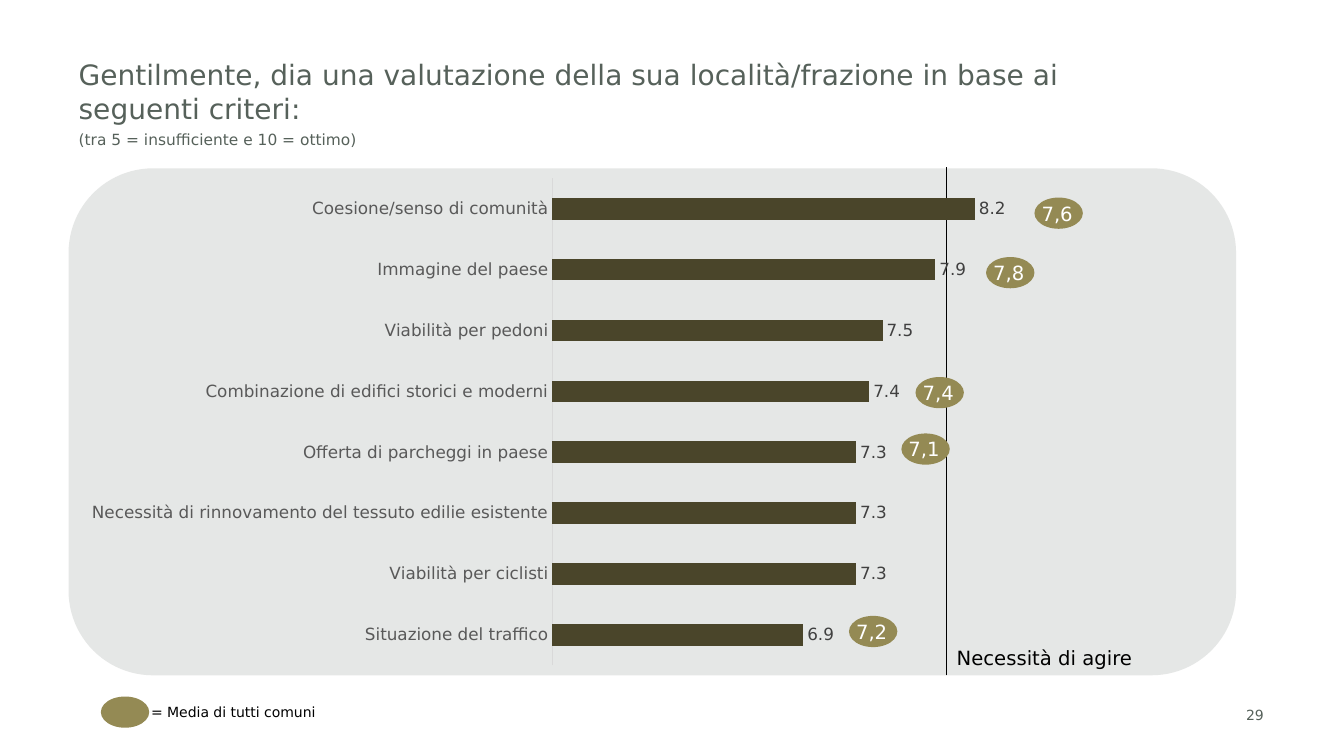
from pptx import Presentation
from pptx.chart.data import CategoryChartData
from pptx.dml.color import RGBColor
from pptx.enum.chart import XL_CHART_TYPE, XL_LABEL_POSITION, XL_TICK_MARK
from pptx.enum.shapes import MSO_CONNECTOR, MSO_SHAPE
from pptx.enum.text import MSO_ANCHOR, PP_ALIGN
from pptx.oxml.ns import qn
from pptx.util import Pt
from lxml import etree

BAR_CLUSTERED = XL_CHART_TYPE.BAR_CLUSTERED
OUTSIDE_END = XL_LABEL_POSITION.OUTSIDE_END
NO_TICK = XL_TICK_MARK.NONE
STRAIGHT = MSO_CONNECTOR.STRAIGHT
ROUNDED, OVAL = MSO_SHAPE.ROUNDED_RECTANGLE, MSO_SHAPE.OVAL
TOP, MIDDLE = MSO_ANCHOR.TOP, MSO_ANCHOR.MIDDLE
LEFT = PP_ALIGN.LEFT

# Content
QUESTION = "Gentilmente, dia una valutazione della sua località/frazione in base ai seguenti criteri:"
SCALE_NOTE = "(tra 5 = insufficiente e 10 = ottimo)"
RATINGS = [
    ("Situazione del traffico", 6.9),
    ("Viabilità per ciclisti", 7.3),
    ("Necessità di rinnovamento del tessuto edilie esistente", 7.3),
    ("Offerta di parcheggi in paese", 7.3),
    ("Combinazione di edifici storici e moderni", 7.4),
    ("Viabilità per pedoni", 7.5),
    ("Immagine del paese", 7.9),
    ("Coesione/senso di comunità", 8.2),
]
# Average of all municipalities: text, left, top
AVERAGES = [
    ("7,6", 1026, 196),
    ("7,8", 978, 255),
    ("7,4", 908, 374),
    ("7,1", 894, 430),
    ("7,2", 842, 611),
]
ACTION_LABEL = "Necessità di agire"
LEGEND = "= Media di tutti comuni"
PAGE_NUMBER = "29"

# Style and layout, 100 px to the inch
FONT = "DejaVu Sans"
COLORS = {
    "slate": "56615A", "bar": "4A452A", "average": "948A54", "axis": "D9D9D9",
    "category": "595959", "value": "404040", "black": "000000", "white": "FFFFFF",
}
EMU_PER_PX = 9144
PANEL = (68, 167, 1158, 503)
OVAL_SIZE = (48, 31)
THRESHOLD_X = 939


def px(*lengths):
    return [length * EMU_PER_PX for length in lengths]


def color(name):
    return RGBColor.from_string(COLORS[name])


def format_font(font, size, color_name):
    font.name = FONT
    font.size = Pt(size)
    font.color.rgb = color(color_name)


def write(frame, text, *, size, color_name="black", anchor=TOP, wrap=True,
          inset=None, space_before=0, append=False):
    frame.word_wrap = wrap
    frame.vertical_anchor = anchor
    if inset is not None:
        frame.margin_left = frame.margin_right = inset
        frame.margin_top = frame.margin_bottom = inset
    paragraph = frame.add_paragraph() if append else frame.paragraphs[0]
    paragraph.alignment = LEFT
    paragraph.line_spacing = 1.0
    paragraph.space_before = Pt(space_before)
    run = paragraph.add_run()
    run.text = text
    format_font(run.font, size, color_name)


def add_filled(kind, box, color_name):
    shape = slide.shapes.add_shape(kind, *px(*box))
    shape.shadow.inherit = False
    shape.fill.solid()
    shape.fill.fore_color.rgb = color(color_name)
    shape.line.fill.background()
    return shape


def add_label(text, box, **text_format):
    write(slide.shapes.add_textbox(*px(*box)).text_frame, text, **text_format)


presentation = Presentation()
presentation.slide_width, presentation.slide_height = px(1333, 750)
slide = presentation.slides.add_slide(presentation.slide_layouts[5])

# Title
title = slide.shapes.title
title.left, title.top, title.width, title.height = px(68, 52, 1110, 39)
write(title.text_frame, QUESTION, size=20, color_name="slate")
write(title.text_frame, SCALE_NOTE, size=11, color_name="slate",
      space_before=4, append=True)

# Panel with a 15 % tint
panel = add_filled(ROUNDED, PANEL, "slate")
tint = panel.fill._xPr.find(".//" + qn("a:srgbClr"))
etree.SubElement(tint, qn("a:alpha"), val="15000")

# Page number and threshold
add_label(PAGE_NUMBER, (1226, 690, 72, 38), size=10, color_name="slate", anchor=MIDDLE)
add_label(ACTION_LABEL, (THRESHOLD_X, 636, 195, 34), size=14, wrap=False)
threshold = slide.shapes.add_connector(
    STRAIGHT, *px(THRESHOLD_X, 670, THRESHOLD_X, 166))
threshold.line.color.rgb = color("black")
threshold.line.width = Pt(0.75)
etree.SubElement(threshold._element.spPr, qn("a:effectLst"))

# Bar chart
chart_data = CategoryChartData(number_format="0.0")
chart_data.categories = [criterion for criterion, rating in RATINGS]
chart_data.add_series("Series 1", [rating for criterion, rating in RATINGS])
chart = slide.shapes.add_chart(BAR_CLUSTERED, *px(*PANEL), chart_data).chart
chart.has_legend = False
chart.has_title = False
format_font(chart.font, 10, "black")

category_axis = chart.category_axis
category_axis.major_tick_mark = category_axis.minor_tick_mark = NO_TICK
category_axis.format.line.color.rgb = color("axis")
category_axis.format.line.width = Pt(0.75)
format_font(category_axis.tick_labels.font, 12, "category")

value_axis = chart.value_axis
value_axis.minimum_scale, value_axis.maximum_scale = 5, 10
value_axis.has_major_gridlines = False
value_axis.visible = False

plot = chart.plots[0]
plot.gap_width = 182
plot.vary_by_categories = False
bars = plot.series[0]
bars.format.fill.solid()
bars.format.fill.fore_color.rgb = color("bar")
labels = bars.data_labels
labels.show_value = True
labels.position = OUTSIDE_END
labels.number_format = "0.0"
labels.number_format_is_linked = False
format_font(labels.font, 12, "value")

# Averages and their legend
for text, left, top in AVERAGES:
    oval = add_filled(OVAL, (left, top, *OVAL_SIZE), "average")
    write(oval.text_frame, text, size=14, color_name="white", anchor=MIDDLE, inset=0)
add_filled(OVAL, (100, 691, *OVAL_SIZE), "average")
add_label(LEGEND, (140, 693, 186, 27), size=10, wrap=False)

presentation.save("out.pptx")
